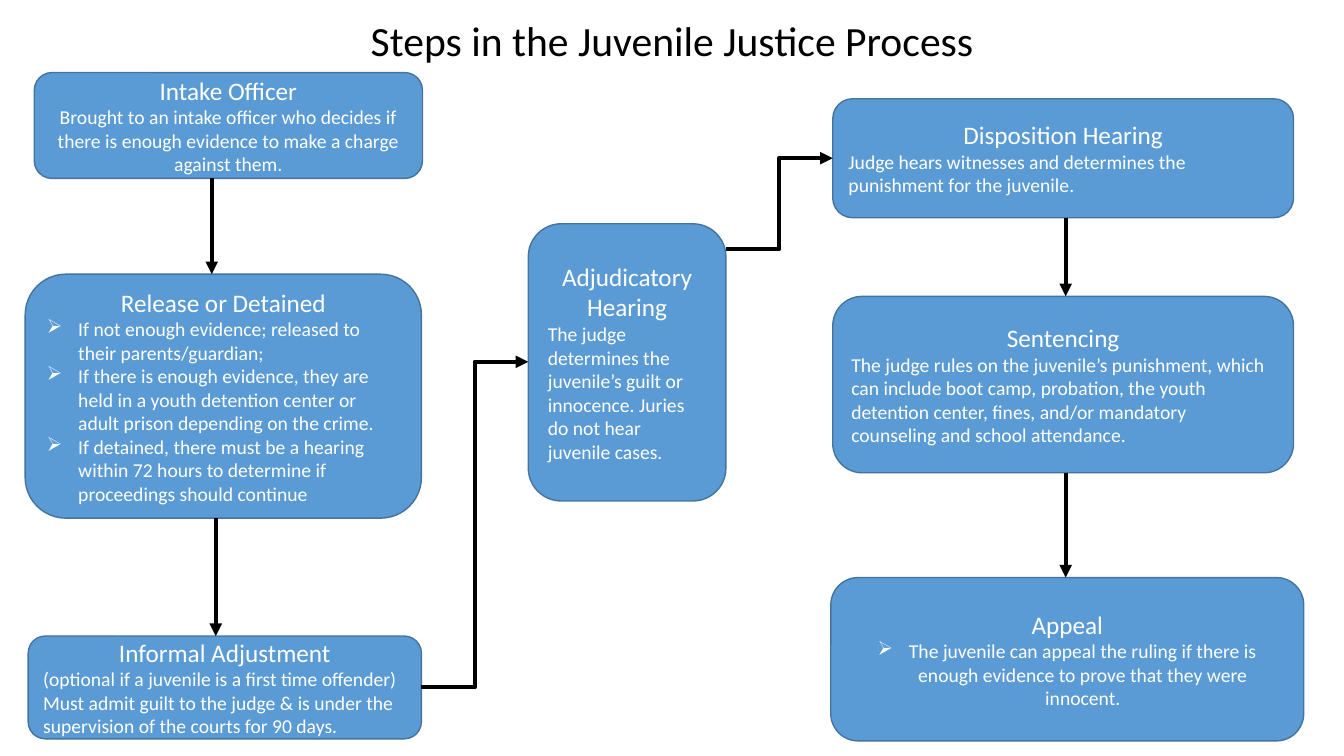
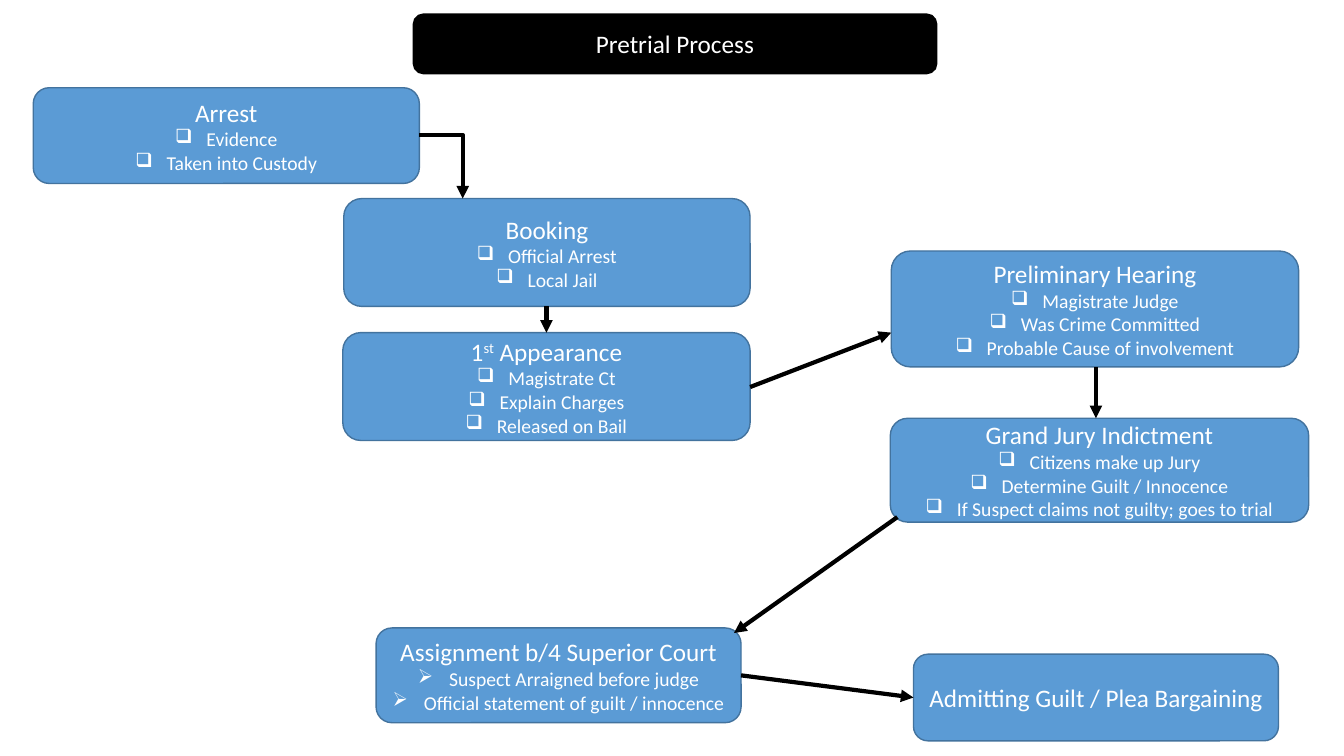
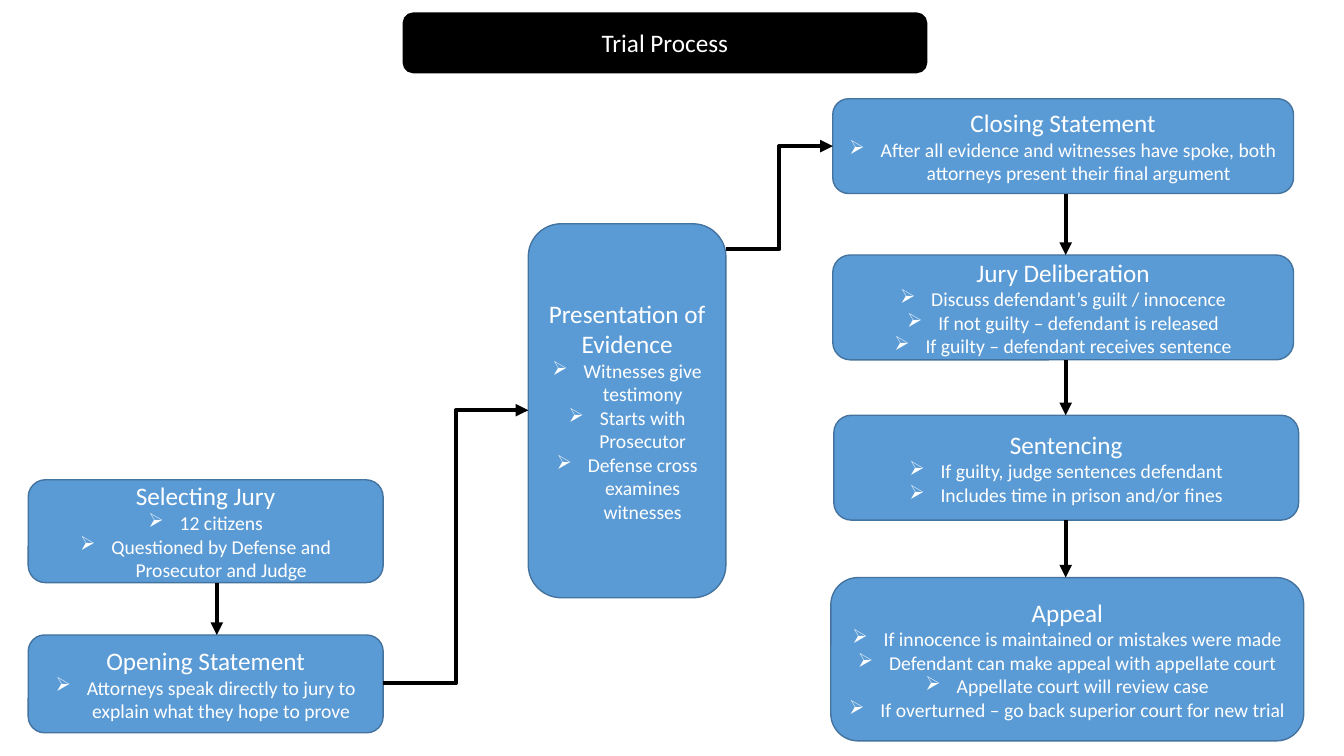
from dataclasses import dataclass

from pptx import Presentation
from pptx import util as u
from pptx.dml.color import RGBColor
from pptx.enum import shapes, text
from pptx.oxml.ns import qn
from pptx.oxml.xmlchemy import OxmlElement

SCALE = 9144  # EMU per px, 100 px to the inch
LEFT, CENTER = text.PP_ALIGN.LEFT, text.PP_ALIGN.CENTER
MIDDLE = text.MSO_ANCHOR.MIDDLE
ARROW, CHECK = "➢", "❑"


@dataclass(frozen=True)
class Theme:
    font: str = "Calibri"
    blue: str = "5B9BD5"
    edge: str = "43739E"
    black: str = "000000"
    white: str = "FFFFFF"
    title: float = 29.7
    heading: int = 18
    body: int = 14
    outline: int = 1
    arrow: int = 3
    indent: int = 31


T = Theme()


# ---- shared helpers ----
def px(*values):
    return [u.Emu(v * SCALE) for v in values]


def apply(obj, **fmt):
    for name, value in fmt.items():
        setattr(obj, name, value)


def write(p, words, size, color, align=CENTER, bullet=None):
    """Fill a paragraph; parts between ^ marks are superscript."""
    p.alignment = align
    for i, part in enumerate(words.split("^")):
        r = p.add_run()
        r.text = part
        apply(r.font, name=T.font, size=u.Pt(size))
        r.font.color.rgb = RGBColor.from_string(color)
        if i % 2:
            r.font._element.set("baseline", "30000")
    if bullet:
        pPr = p._p.get_or_add_pPr()
        pPr.set("marL", str(T.indent * SCALE))
        pPr.set("indent", str(-T.indent * SCALE))
        bu = OxmlElement("a:buChar")
        bu.set("char", bullet)
        pPr.append(bu)


def card(sl, box, fill, edge):
    sp = sl.shapes.add_shape(shapes.MSO_SHAPE.ROUNDED_RECTANGLE, *px(*box))
    sp.shadow.inherit = False
    sp.fill.solid()
    sp.fill.fore_color.rgb = RGBColor.from_string(fill)
    sp.line.color.rgb = RGBColor.from_string(edge)
    sp.line.width = u.Pt(T.outline)
    apply(sp.text_frame, word_wrap=True, vertical_anchor=MIDDLE)
    return sp.text_frame


# ---- titles ----
def plain_title(sl, box, words):
    tf = sl.shapes.add_textbox(*px(*box)).text_frame
    tf.word_wrap = True
    p = tf.paragraphs[0]
    p.line_spacing = 0.7
    write(p, words, T.title, T.black)


def title_band(sl, box, words):
    tf = card(sl, box, T.black, T.black)
    write(tf.paragraphs[0], words, T.heading, T.white)


# ---- steps and arrows ----
def step(sl, box, heading, *lines, bullet=None, align=CENTER):
    """Draw a blue step and return its box for the arrows."""
    tf = card(sl, box, T.blue, T.edge)
    write(tf.paragraphs[0], heading, T.heading, T.white)
    for line in lines:
        write(tf.add_paragraph(), line, T.body, T.white, align, bullet)
    return box


def arrow(sl, start, end, preset="line"):
    kind = shapes.MSO_CONNECTOR.STRAIGHT if preset == "line" else shapes.MSO_CONNECTOR.ELBOW
    c = sl.shapes.add_connector(kind, *px(*start, *end))
    c.line.color.rgb = RGBColor.from_string(T.black)
    c.line.width = u.Pt(T.arrow)
    spPr = c.element.spPr
    spPr.find(qn("a:prstGeom")).set("prst", preset)
    tail = OxmlElement("a:tailEnd")
    tail.set("type", "triangle")
    spPr.find(qn("a:ln")).append(tail)
    spPr.append(OxmlElement("a:effectLst"))


def down(sl, x, upper, lower):
    """Arrow from the foot of one step to the top of the next."""
    arrow(sl, (x, upper[1] + upper[3]), (x, lower[1]))


def across(sl, a, y1, b, y2, preset="bentConnector3"):
    """Arrow from the right side of one step to the left side of another."""
    arrow(sl, (a[0] + a[2], y1), (b[0], y2), preset)


# ---- slides ----
def juvenile_slide(sl):
    plain_title(sl, (92, 23, 1150, 48), "Steps in the Juvenile Justice Process")
    # left column
    intake = step(sl, (34, 72, 385, 105), "Intake Officer",
                  "Brought to an intake officer who decides if there is enough "
                  "evidence to make a charge against them.")
    release = step(sl, (25, 272, 393, 242), "Release or Detained",
                   "If not enough evidence; released to their parents/guardian;",
                   "If there is enough evidence, they are held in a youth detention "
                   "center or adult prison depending on the crime.",
                   "If detained, there must be a hearing within 72 hours to determine "
                   "if proceedings should continue",
                   bullet=ARROW, align=LEFT)
    informal = step(sl, (28, 631, 390, 102), "Informal Adjustment",
                    "(optional if a juvenile is a first time offender)",
                    "Must admit guilt to the judge & is under the supervision of the "
                    "courts for 90 days.", align=LEFT)
    # middle
    hearing = step(sl, (524, 222, 196, 275), "Adjudicatory Hearing",
                   "The judge determines the juvenile’s guilt or innocence. Juries do "
                   "not hear juvenile cases.", align=LEFT)
    # right column
    disposition = step(sl, (826, 98, 457, 118), "Disposition Hearing",
                       "Judge hears witnesses and determines the punishment for the "
                       "juvenile.", align=LEFT)
    sentencing = step(sl, (826, 294, 457, 175), "Sentencing",
                      "The judge rules on the juvenile’s punishment, which can include "
                      "boot camp, probation, the youth detention center, fines, and/or "
                      "mandatory counseling and school attendance.", align=LEFT)
    appeal = step(sl, (824, 573, 469, 162), "Appeal",
                  "The juvenile can appeal the ruling if there is enough evidence to "
                  "prove that they were innocent.", bullet=ARROW)
    # arrows
    down(sl, 210, intake, release)
    down(sl, 214, release, informal)
    across(sl, informal, 682, hearing, 359)
    across(sl, hearing, 247, disposition, 157)
    down(sl, 1057, disposition, sentencing)
    down(sl, 1057, sentencing, appeal)


def pretrial_slide(sl):
    title_band(sl, (410, 14, 519, 59), "Pretrial Process")
    # before the court
    step(sl, (33, 87, 383, 95), "Arrest",
         "Evidence", "Taken into Custody", bullet=CHECK)
    booking = step(sl, (341, 197, 403, 107), "Booking",
                   "Official Arrest", "Local Jail", bullet=CHECK)
    first = step(sl, (340, 330, 404, 107), "1^st^ Appearance",
                 "Magistrate Ct", "Explain Charges", "Released on Bail", bullet=CHECK)
    # hearings
    preliminary = step(sl, (884, 249, 404, 115), "Preliminary Hearing",
                       "Magistrate Judge", "Was Crime Committed",
                       "Probable Cause of involvement", bullet=CHECK)
    jury = step(sl, (883, 415, 415, 103), "Grand Jury Indictment",
                "Citizens make up Jury", "Determine Guilt / Innocence",
                "If Suspect claims not guilty; goes to trial", bullet=CHECK)
    # outcome
    court = step(sl, (373, 623, 362, 94), "Assignment b/4 Superior Court",
                 "Suspect Arraigned before judge",
                 "Official statement of guilt / innocence", bullet=ARROW)
    plea = step(sl, (906, 649, 362, 86), "Admitting Guilt / Plea Bargaining")
    # arrows
    arrow(sl, (416, 134), (459, 197), "bentConnector2")
    down(sl, 542, booking, first)
    across(sl, first, 384, preliminary, 330, "line")
    down(sl, 1087, preliminary, jury)
    arrow(sl, (890, 513), (728, 628))
    across(sl, court, 670, plea, 692, "line")


def trial_slide(sl):
    title_band(sl, (400, 13, 519, 59), "Trial Process")
    # left column
    selecting = step(sl, (28, 476, 352, 102), "Selecting Jury", "12 citizens",
                     "Questioned by Defense and Prosecutor and Judge", bullet=ARROW)
    opening = step(sl, (28, 630, 352, 97), "Opening Statement",
                   "Attorneys speak directly to jury to explain what they hope to prove",
                   bullet=ARROW)
    # middle
    evidence = step(sl, (524, 222, 196, 371), "Presentation of Evidence",
                    "Witnesses give testimony", "Starts with Prosecutor",
                    "Defense cross examines witnesses", bullet=ARROW)
    # right column
    closing = step(sl, (826, 98, 457, 94), "Closing Statement",
                   "After all evidence and witnesses have spoke, both attorneys present "
                   "their final argument", bullet=ARROW)
    deliberation = step(sl, (826, 253, 457, 104), "Jury Deliberation",
                        "Discuss defendant’s guilt / innocence",
                        "If not guilty – defendant is released",
                        "If guilty – defendant receives sentence", bullet=ARROW)
    sentencing = step(sl, (827, 412, 461, 104), "Sentencing",
                      "If guilty, judge sentences defendant",
                      "Includes time in prison and/or fines", bullet=ARROW)
    appeal = step(sl, (824, 573, 469, 162), "Appeal",
                  "If innocence is maintained or mistakes were made",
                  "Defendant can make appeal with appellate court",
                  "Appellate court will review case",
                  "If overturned – go back superior court for new trial", bullet=ARROW)
    # arrows
    down(sl, 215, selecting, opening)
    across(sl, opening, 678, evidence, 407)
    across(sl, evidence, 247, closing, 145)
    for upper, lower in ((closing, deliberation), (deliberation, sentencing),
                         (sentencing, appeal)):
        down(sl, 1057, upper, lower)


def main():
    prs = Presentation()
    prs.slide_width, prs.slide_height = px(1333, 750)
    for build in (juvenile_slide, pretrial_slide, trial_slide):
        build(prs.slides.add_slide(prs.slide_layouts[6]))
    prs.save("out.pptx")


if __name__ == "__main__":
    main()
